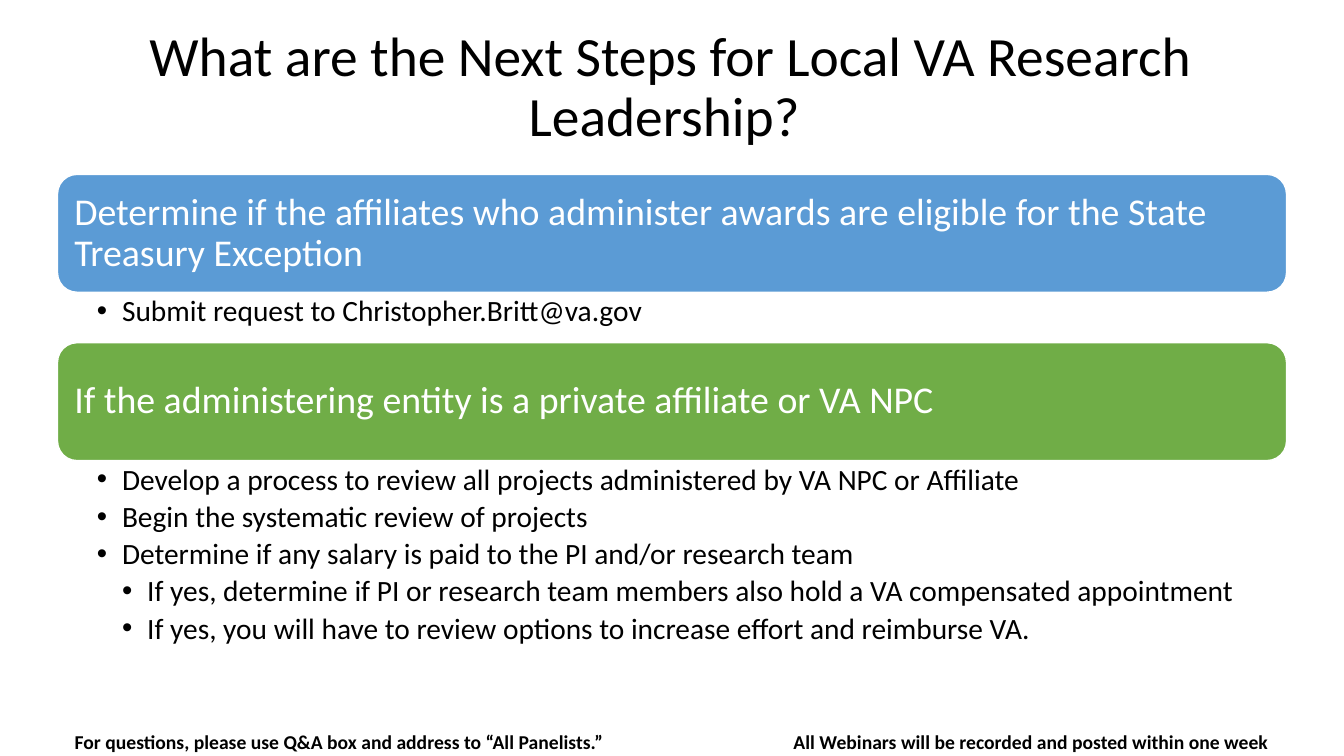
"""Build the slide on next steps for local VA research leadership."""
from dataclasses import dataclass

from lxml import etree
from pptx import Presentation
from pptx.dml.color import RGBColor
from pptx.enum.shapes import MSO_SHAPE
from pptx.enum.text import MSO_ANCHOR, PP_ALIGN
from pptx.oxml.ns import qn
from pptx.slide import Slide
from pptx.text.text import TextFrame, _Paragraph
from pptx.util import Inches, Pt

ROUNDED = MSO_SHAPE.ROUNDED_RECTANGLE
MIDDLE, TOP = MSO_ANCHOR.MIDDLE, MSO_ANCHOR.TOP
LEFT, CENTER = PP_ALIGN.LEFT, PP_ALIGN.CENTER


@dataclass(frozen=True)
class Theme:
    """Colours, font and type sizes."""
    font: str = "Calibri"
    text: str = "000000"
    light: str = "FFFFFF"
    blue: str = "5B9BD5"
    green: str = "70AD47"
    title: float = 39.6
    heading: float = 27
    bullet: float = 21
    footer: float = 14


@dataclass(frozen=True)
class Box:
    """Position and size in inches."""
    left: float
    top: float
    width: float
    height: float


@dataclass(frozen=True)
class Bullet:
    """A bulleted line and its indent level."""
    text: str
    level: int = 1


@dataclass(frozen=True)
class Section:
    """A coloured heading bar with bullets below it."""
    heading: str
    color: str
    top: float
    body_height: float
    bullets: tuple[Bullet, ...]


THEME = Theme()
BAR_LEFT, BAR_WIDTH, BAR_HEIGHT = 0.57, 12.19, 1.17
INDENT = 0.25
TITLE = "What are the Next Steps for Local VA Research Leadership? "
FOOTER = ("For questions, please use Q&A box and address to “All Panelists.”\t"
          "All Webinars will be recorded and posted within one week")
SECTIONS = (
    Section("Determine if the affiliates who administer awards are eligible "
            "for the State Treasury Exception", THEME.blue, 1.73, 0.49,
            (Bullet("Submit request to Christopher.Britt@va.gov"),)),
    Section("If the administering entity is a private affiliate or VA NPC",
            THEME.green, 3.4, 2.02, (
                Bullet("Develop a process to review all projects administered "
                       "by VA NPC or Affiliate"),
                Bullet("Begin the systematic review of projects"),
                Bullet("Determine if any salary is paid to the PI and/or research team"),
                Bullet("If yes, determine if PI or research team members also "
                       "hold a VA compensated appointment", 2),
                Bullet("If yes, you will have to review options to increase "
                       "effort and reimburse VA.", 2))),
)


def set_frame(tf: TextFrame, anchor: MSO_ANCHOR, left: float = 0.1,
              top: float = 0.05, right: float = 0.1) -> None:
    """Set wrapping, anchor and insets of a text frame."""
    tf.word_wrap = True
    tf.vertical_anchor = anchor
    tf.margin_left, tf.margin_right = Inches(left), Inches(right)
    tf.margin_top = tf.margin_bottom = Inches(top)


def write(p: _Paragraph, text: str, size: float, color: str = THEME.text,
          align: PP_ALIGN = LEFT, spacing: float = 0.9, bold: bool = False) -> None:
    """Fill a paragraph and format its runs."""
    p.text = text
    p.alignment = align
    p.line_spacing = spacing
    for r in p.runs:
        r.font.name = THEME.font
        r.font.size = Pt(size)
        r.font.bold = bold
        r.font.color.rgb = RGBColor.from_string(color)


def add_text(s: Slide, box: Box) -> TextFrame:
    """Add a text box and return its frame."""
    sp = s.shapes.add_textbox(Inches(box.left), Inches(box.top),
                              Inches(box.width), Inches(box.height))
    return sp.text_frame


def add_bar(s: Slide, section: Section) -> None:
    """Draw the rounded heading bar of a section."""
    sp = s.shapes.add_shape(ROUNDED, Inches(BAR_LEFT), Inches(section.top),
                            Inches(BAR_WIDTH), Inches(BAR_HEIGHT))
    sp.shadow.inherit = False
    sp.fill.solid()
    sp.fill.fore_color.rgb = RGBColor.from_string(section.color)
    sp.line.color.rgb = RGBColor.from_string(THEME.light)
    sp.line.width = Pt(1)
    set_frame(sp.text_frame, MIDDLE, 0.11, 0.11, 0.11)
    write(sp.text_frame.paragraphs[0], section.heading, THEME.heading, THEME.light)


def add_bullets(s: Slide, section: Section) -> None:
    """Write the bullets under a heading bar."""
    tf = add_text(s, Box(BAR_LEFT, section.top + BAR_HEIGHT, BAR_WIDTH,
                         section.body_height))
    set_frame(tf, TOP, 0.39, 0.04, 0.21)
    for i, bullet in enumerate(section.bullets):
        p = tf.add_paragraph() if i else tf.paragraphs[0]
        write(p, bullet.text, THEME.bullet)
        p.level = bullet.level
        p.space_after = Pt(3.9)
        pPr = p._p.get_or_add_pPr()
        pPr.set("marL", str(Inches(INDENT * bullet.level)))
        pPr.set("indent", str(Inches(-INDENT)))
        etree.SubElement(pPr, qn("a:buFont"), typeface="Arial")
        etree.SubElement(pPr, qn("a:buChar"), char="•")


def add_footer(s: Slide) -> None:
    """Write the two footer notes, parted by a tab stop."""
    tf = add_text(s, Box(0, 7.22, 13.33, 0.28))
    set_frame(tf, MIDDLE, 0.74)
    p = tf.paragraphs[0]
    write(p, FOOTER, THEME.footer, spacing=1.0, bold=True)
    tabs = etree.SubElement(p._p.get_or_add_pPr(), qn("a:tabLst"))
    etree.SubElement(tabs, qn("a:tab"), pos=str(Inches(7.13)), algn="l")


def main() -> None:
    """Build and save the slide."""
    prs = Presentation()
    prs.slide_width, prs.slide_height = Inches(13.33), Inches(7.5)
    s = prs.slides.add_slide(prs.slide_layouts[6])
    tf = add_text(s, Box(0.9, 0.26, 11.5, 1.24))
    set_frame(tf, MIDDLE)
    write(tf.paragraphs[0], TITLE, THEME.title, align=CENTER)
    for section in SECTIONS:
        add_bar(s, section)
        add_bullets(s, section)
    add_footer(s)
    prs.save("out.pptx")


if __name__ == "__main__":
    main()
